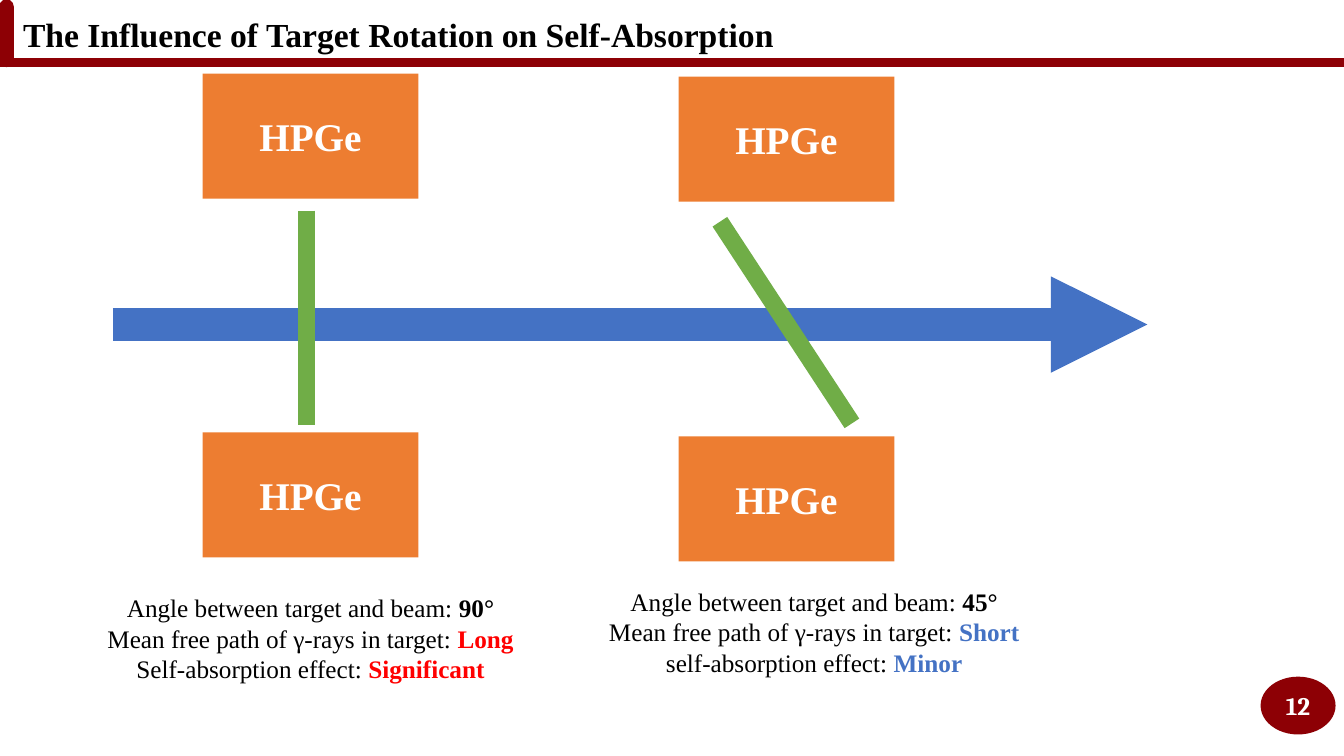
from dataclasses import dataclass

from lxml import etree
from pptx import Presentation
from pptx.dml.color import RGBColor
from pptx.enum import shapes, text
from pptx.oxml.ns import qn
from pptx.util import Inches, Pt


@dataclass(frozen=True)
class Theme:
    maroon: str = "8D0005"
    black: str = "000000"
    white: str = "FFFFFF"
    red: str = "FF0000"
    blue: str = "4472C4"
    green: str = "70AD47"
    orange: str = "ED7D31"
    font: str = "Times New Roman"
    number_font: str = "Cambria"
    title_size: float = 24
    label_size: float = 28
    body_size: float = 18
    beam_width: float = 23
    target_width: float = 12.5


class SlideBuilder:
    def __init__(self, page, theme):
        self.page = page
        self.theme = theme

    def style_font(self, font, size, color, bold=False, name=None):
        font.name = name or self.theme.font
        font.size = Pt(size)
        font.bold = bold
        font.color.rgb = RGBColor.from_string(color)

    def shape(self, kind, area, fill, outlined=False):
        shape = self.page.shapes.add_shape(kind, *map(Inches, area))
        shape.shadow.inherit = False
        shape.fill.solid()
        shape.fill.fore_color.rgb = RGBColor.from_string(fill)
        if outlined:
            shape.line.color.rgb = RGBColor.from_string(fill)
            shape.line.width = Pt(1)
        else:
            shape.line.fill.background()
        return shape

    def label(self, shape, words, size, name=None):
        frame = shape.text_frame
        frame.margin_left = frame.margin_right = 0
        frame.vertical_anchor = text.MSO_ANCHOR.MIDDLE
        para = frame.paragraphs[0]
        para.text = words
        para.alignment = text.PP_ALIGN.CENTER
        self.style_font(para.font, size, self.theme.white, True, name)

    def text_box(self, area):
        box = self.page.shapes.add_textbox(*map(Inches, area))
        box.text_frame.word_wrap = True
        return box.text_frame

    def title(self, area, words):
        frame = self.text_box(area)
        frame.vertical_anchor = text.MSO_ANCHOR.MIDDLE
        para = frame.paragraphs[0]
        para.text = words
        para.line_spacing = 0.9
        self.style_font(para.font, self.theme.title_size, self.theme.black, True)

    def caption(self, area, rows):
        """Centred lines, each a plain description followed by a bold coloured value."""
        frame = self.text_box(area)
        for index, (description, value, color) in enumerate(rows):
            para = frame.add_paragraph() if index else frame.paragraphs[0]
            para.alignment = text.PP_ALIGN.CENTER
            for words, shade, bold in ((description, self.theme.black, False),
                                       (value, color, True)):
                span = para.add_run()
                span.text = words
                self.style_font(span.font, self.theme.body_size, shade, bold)

    def line(self, start, end, color, width, arrow=False):
        line = self.page.shapes.add_connector(
            shapes.MSO_CONNECTOR.STRAIGHT, *map(Inches, (*start, *end)))
        line.line.color.rgb = RGBColor.from_string(color)
        line.line.width = Pt(width)
        if arrow:
            etree.SubElement(line.line._get_or_add_ln(), qn("a:tailEnd"), type="triangle")
        etree.SubElement(line._element.spPr, qn("a:effectLst"))


def main():
    deck = Presentation()
    deck.slide_width, deck.slide_height = Inches(13.33), Inches(7.5)
    theme = Theme()
    slide = SlideBuilder(deck.slides.add_slide(deck.slide_layouts[6]), theme)
    preset = shapes.MSO_SHAPE

    slide.shape(preset.RECTANGLE, (0, 0.58, 13.33, 0.08), theme.maroon, outlined=True)
    tab = slide.shape(preset.ROUNDED_RECTANGLE, (0, 0, 0.13, 0.66), theme.maroon, outlined=True)
    tab.adjustments[0] = 0.5
    slide.title((0.13, 0.06, 9.71, 0.61), "The Influence of Target Rotation on Self-Absorption")

    angle = "Angle between target and beam: "
    free_path = "Mean free path of γ-rays in target: "
    slide.caption((0.86, 5.83, 4.44, 1.01), [
        (angle, "90°", theme.black),
        (free_path, "Long", theme.red),
        ("Self-absorption effect: ", "Significant", theme.red)])
    slide.caption((5.81, 5.77, 4.53, 1.07), [
        (angle, "45°", theme.black),
        (free_path, "Short", theme.blue),
        ("self-absorption effect: ", "Minor", theme.blue)])

    badge = slide.shape(preset.OVAL, (12.51, 6.72, 0.73, 0.56), theme.maroon, outlined=True)
    slide.label(badge, "12", theme.body_size, theme.number_font)

    slide.line((1.12, 3.22), (11.38, 3.22), theme.blue, theme.beam_width, arrow=True)
    for start, end in (((3.04, 2.09), (3.04, 4.22)), ((7.14, 2.2), (8.45, 4.2))):
        slide.line(start, end, theme.green, theme.target_width)

    for left, tops in ((2.01, (0.73, 4.29)), (6.73, (0.76, 4.33))):
        for top in tops:
            detector = slide.shape(preset.RECTANGLE, (left, top, 2.14, 1.24), theme.orange)
            slide.label(detector, "HPGe", theme.label_size)

    deck.save("out.pptx")


if __name__ == "__main__":
    main()
